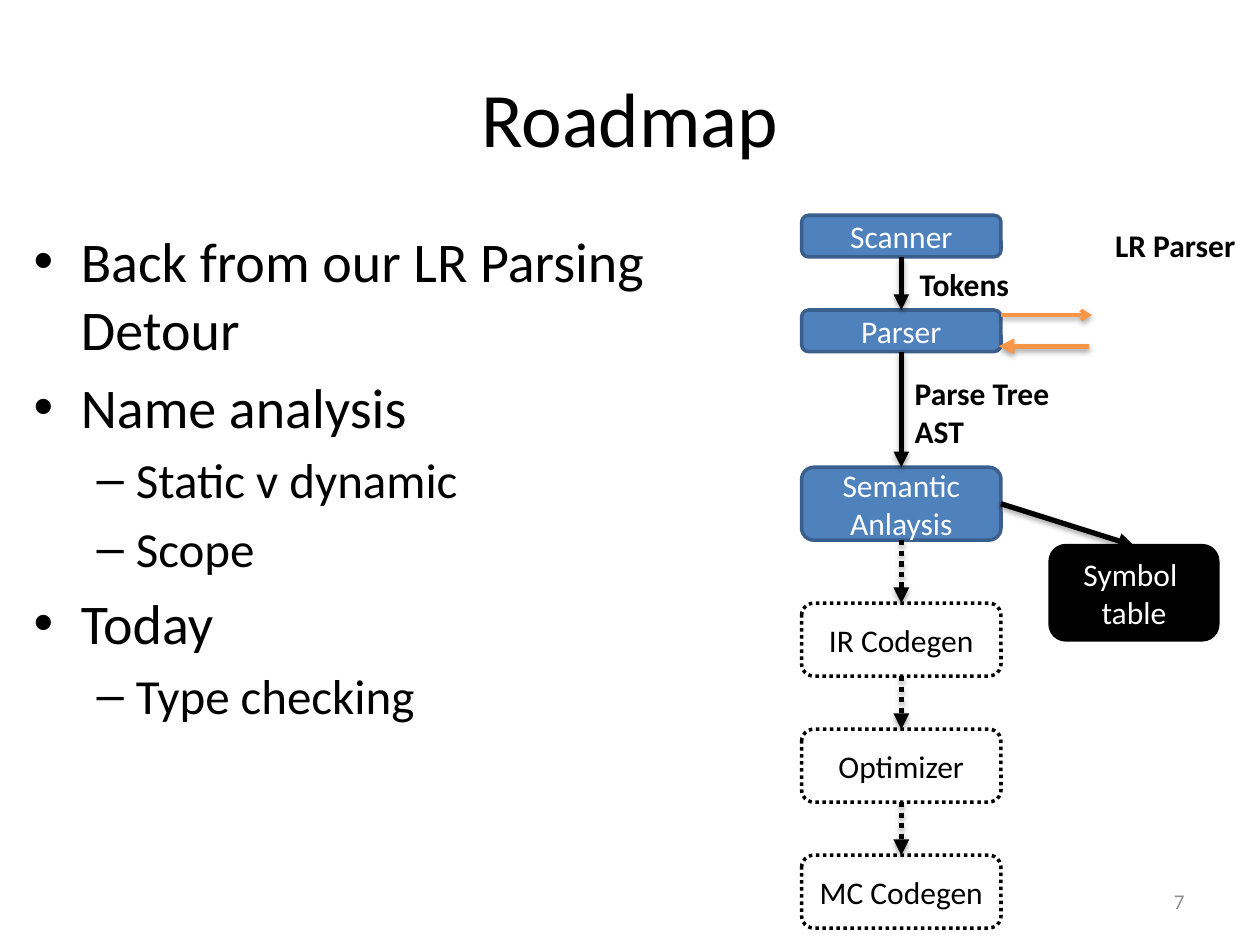
import itertools

import lxml.etree
import pptx
import pptx.dml.color
import pptx.enum.dml
import pptx.enum.shapes
import pptx.enum.text
import pptx.oxml.ns
import pptx.util

Cm = pptx.util.Cm
Pt = pptx.util.Pt
ALIGN = pptx.enum.text.PP_ALIGN
ANCHOR = pptx.enum.text.MSO_ANCHOR
DOTTED = pptx.enum.dml.MSO_LINE.ROUND_DOT
TOP, BOTTOM, RIGHT = 0, 2, 3

LABEL = {"size": Pt(18), "bold": True}
DONE = {"fill": "4F81BD", "border": "3A5F8C", "ink": "FFFFFF"}
PENDING = {"fill": "FFFFFF", "border": "000000", "ink": "000000", "dash": DOTTED}
SYMBOLS = {"fill": "000000", "border": "000000", "ink": "FFFFFF"}

# Text, top and height within the pipeline (cm), look
STAGES = [
    ("Scanner", 0, 0.84, DONE),
    ("Parser", 1.91, 0.84, DONE),
    ("Semantic Anlaysis", 5.08, 1.47, DONE),
    ("IR Codegen", 7.82, 1.47, PENDING),
    ("Optimizer", 10.36, 1.47, PENDING),
    ("MC Codegen", 12.9, 1.47, PENDING),
]
# Text, level
BULLETS = [
    ("Back from our LR Parsing Detour", 0),
    ("Name analysis", 0),
    ("Static v dynamic", 1),
    ("Scope", 1),
    ("Today", 0),
    ("Type checking", 1),
]
# Size, left margin and hanging indent (cm), bullet
LEVELS = [(32, 0.95, 0.95, "•"), (28, 2.06, 0.79, "–")]


def color(hex_string):
    return pptx.dml.color.RGBColor.from_string(hex_string)


def add_child(parent, tag, **attributes):
    return lxml.etree.SubElement(parent, pptx.oxml.ns.qn(tag), attributes)


def format_text(paragraph, text, ink, font_values):
    run = paragraph.add_run()
    run.text = text
    run.font.color.rgb = color(ink)
    for name, value in {"name": "Calibri", **font_values}.items():
        setattr(run.font, name, value)


def write_lines(text_frame, lines, ink, font_values, align=ALIGN.LEFT):
    for index, line in enumerate(lines):
        paragraph = text_frame.add_paragraph() if index else text_frame.paragraphs[0]
        paragraph.alignment = align
        format_text(paragraph, line, ink, font_values)


def add_text(slide, box, lines, font_values, ink="000000", align=ALIGN.LEFT,
             anchor=ANCHOR.TOP, wrap=True):
    text_frame = slide.shapes.add_textbox(*map(Cm, box)).text_frame
    text_frame.word_wrap = wrap
    text_frame.vertical_anchor = anchor
    if not wrap:
        text_frame.auto_size = pptx.enum.text.MSO_AUTO_SIZE.SHAPE_TO_FIT_TEXT
    write_lines(text_frame, lines, ink, font_values, align)
    return text_frame


def add_bullets(slide, box):
    text_frame = add_text(slide, box, [], {})
    for index, (text, level) in enumerate(BULLETS):
        size, margin, hanging, bullet = LEVELS[level]
        paragraph = text_frame.add_paragraph() if index else text_frame.paragraphs[0]
        paragraph.level = level
        paragraph.space_before = Pt(size * 0.2)
        format_text(paragraph, text, "000000", {"size": Pt(size)})
        properties = paragraph._p.get_or_add_pPr()
        properties.set("marL", str(Cm(margin)))
        properties.set("indent", str(-Cm(hanging)))
        add_child(properties, "a:buFont", typeface="Arial")
        add_child(properties, "a:buChar", char=bullet)


def add_node(slide, box, lines, look):
    shape = slide.shapes.add_shape(
        pptx.enum.shapes.MSO_SHAPE.ROUNDED_RECTANGLE, *map(Cm, box))
    shape.shadow.inherit = False
    shape.fill.solid()
    shape.fill.fore_color.rgb = color(look["fill"])
    shape.line.color.rgb = color(look["border"])
    shape.line.width = Pt(2)
    shape.line.dash_style = look.get("dash")
    shape.text_frame.word_wrap = True
    shape.text_frame.vertical_anchor = ANCHOR.MIDDLE
    write_lines(shape.text_frame, lines, look["ink"], {"size": Pt(18)}, ALIGN.CENTER)
    return shape


def add_arrow(slide, points=(0, 0, 0, 0), ink="000000", width=3, dash=None,
              head="triangle"):
    """Draw an arrow with a soft shadow below it."""
    arrow = slide.shapes.add_connector(
        pptx.enum.shapes.MSO_CONNECTOR.STRAIGHT, *map(Cm, points))
    arrow.line.color.rgb = color(ink)
    arrow.line.width = Pt(width)
    arrow.line.dash_style = dash
    add_child(arrow.line._get_or_add_ln(), "a:tailEnd", type=head)
    effects = add_child(arrow._element.spPr, "a:effectLst")
    shadow = add_child(effects, "a:outerShdw", blurRad=str(Pt(3.1)),
                       dist=str(Pt(1.8)), dir="5400000", rotWithShape="0")
    shadow_color = add_child(shadow, "a:srgbClr", val="000000")
    add_child(shadow_color, "a:alpha", val="35000")
    return arrow


def join(slide, start, start_site, end, end_site, dash=None):
    arrow = add_arrow(slide, dash=dash)
    arrow.begin_connect(start, start_site)
    arrow.end_connect(end, end_site)


def add_pipeline(slide, left, top, width):
    nodes = [add_node(slide, (left, top + offset, width, height), [text], look)
             for text, offset, height, look in STAGES]
    looks = [stage[3] for stage in STAGES]
    for (start, _), (end, look) in itertools.pairwise(zip(nodes, looks)):
        join(slide, start, BOTTOM, end, TOP, look.get("dash"))

    symbol_table = add_node(slide, (left + 5.01, top + 6.66, 3.38, 1.9),
                            ["Symbol ", "table"], SYMBOLS)
    join(slide, nodes[2], RIGHT, symbol_table, TOP)

    labels = [
        (["Tokens"], 2.13, 0.87, 2.31, 1.02),
        (["Parse Tree", "AST"], 2.03, 3.08, 3.25, 1.8),
        (["LR Parser"], 6.07, 0.1, 2.97, 1.02),
    ]
    for lines, x, y, label_width, height in labels:
        add_text(slide, (left + x, top + y, label_width, height), lines, LABEL,
                 wrap=False)

    side = left + width
    add_arrow(slide, (side, top + 2.01, side + 1.83, top + 2.01), "F79646", 2,
              head="arrow")
    add_arrow(slide, (side + 1.78, top + 2.64, side - 0.05, top + 2.64), "F79646")


def main():
    presentation = pptx.Presentation()
    presentation.slide_width = Cm(25.4)
    presentation.slide_height = Cm(19.05)
    slide = presentation.slides.add_slide(presentation.slide_layouts[6])
    add_text(slide, (1.27, 0.76, 22.86, 3.18), ["Roadmap"], {"size": Pt(44)},
             align=ALIGN.CENTER, anchor=ANCHOR.MIDDLE)
    add_bullets(slide, (0.43, 4.45, 13.97, 12.57))
    add_pipeline(slide, 16.16, 4.34, 4.02)
    add_text(slide, (18.21, 17.65, 5.92, 1.02), ["7"], {"size": Pt(12)},
             "8C8C8C", ALIGN.RIGHT, ANCHOR.MIDDLE)
    presentation.save("out.pptx")


if __name__ == "__main__":
    main()
